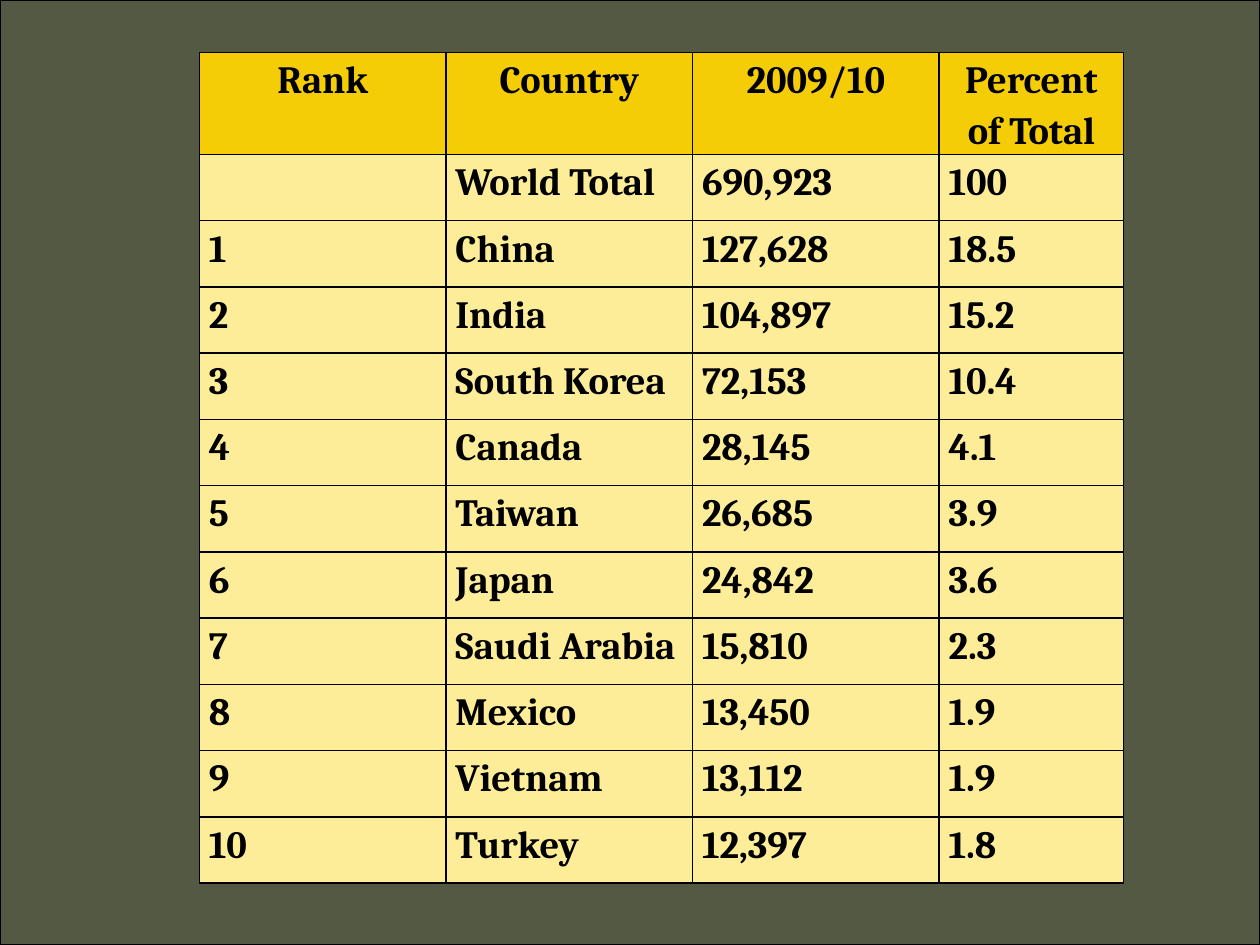
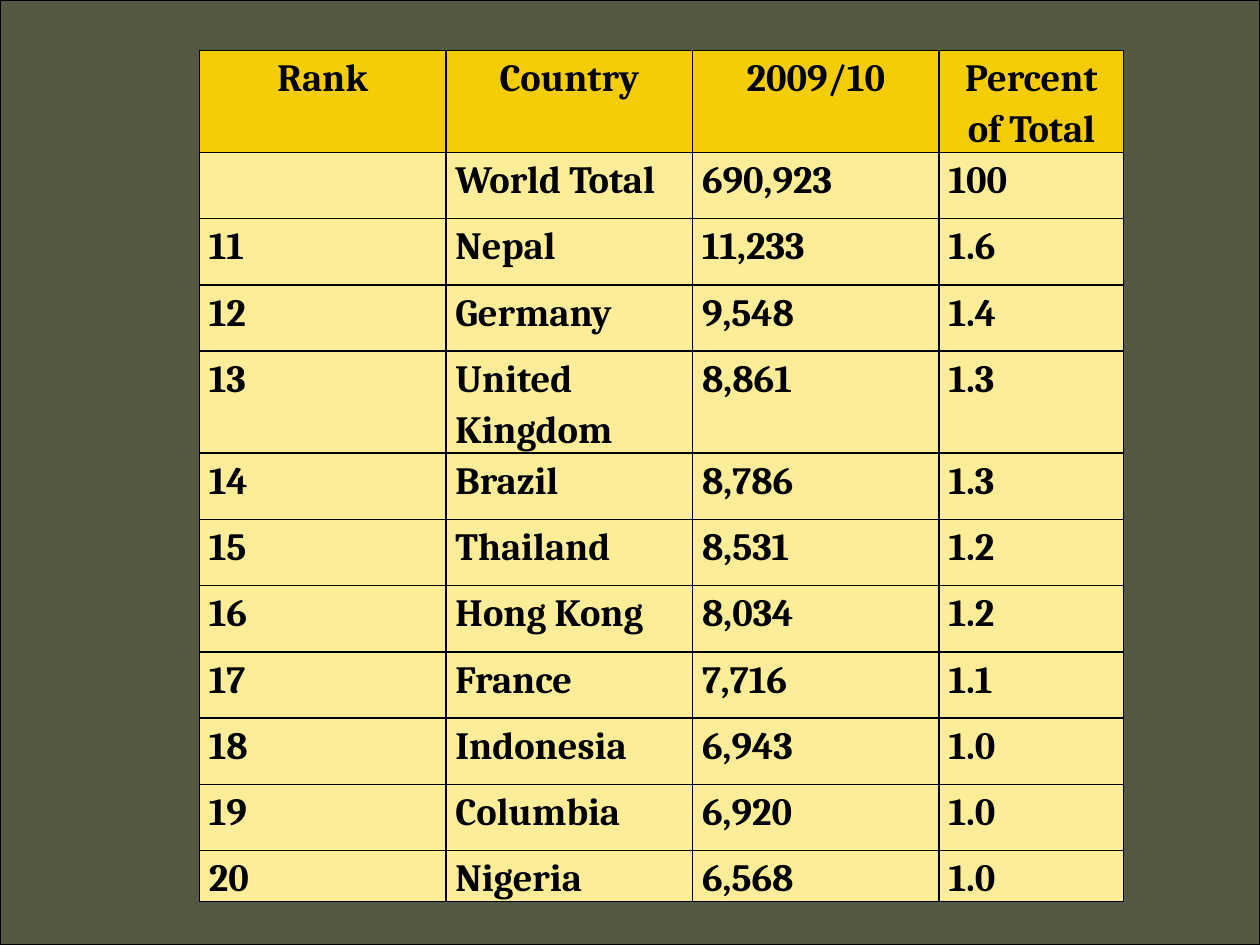
from lxml import etree
from pptx import Presentation
from pptx.dml.color import RGBColor
from pptx.enum import shapes, text
from pptx.oxml import ns
from pptx.util import Pt

OLIVE = RGBColor(0x54, 0x59, 0x43)
GOLD = RGBColor(0xF5, 0xCD, 0x06)
CREAM = RGBColor(0xFD, 0xEC, 0x98)
BLACK = RGBColor(0, 0, 0)

SLIDE_WIDTH, SLIDE_HEIGHT = Pt(720), Pt(540)
TABLE_LEFT = Pt(114)
COLUMN_WIDTHS = [Pt(140.9)] * 3 + [Pt(105.5)]
ROW_HEIGHT, TWO_LINE_HEIGHT, ONE_LINE_HEIGHT = Pt(37.87), Pt(58.3), Pt(29.1)

HEADINGS = ("Rank", "Country", "2009/10", "Percent of Total")
WORLD_TOTAL = ("", "World Total", "690,923", "100")
TOP_TEN = [
    ("1", "China", "127,628", "18.5"),
    ("2", "India", "104,897", "15.2"),
    ("3", "South Korea", "72,153", "10.4"),
    ("4", "Canada", "28,145", "4.1"),
    ("5", "Taiwan", "26,685", "3.9"),
    ("6", "Japan", "24,842", "3.6"),
    ("7", "Saudi Arabia", "15,810", "2.3"),
    ("8", "Mexico", "13,450", "1.9"),
    ("9", "Vietnam", "13,112", "1.9"),
    ("10", "Turkey", "12,397", "1.8"),
]
NEXT_TEN = [
    ("11", "Nepal", "11,233", "1.6"),
    ("12", "Germany", "9,548", "1.4"),
    ("13", "United Kingdom", "8,861", "1.3"),
    ("14", "Brazil", "8,786", "1.3"),
    ("15", "Thailand", "8,531", "1.2"),
    ("16", "Hong Kong", "8,034", "1.2"),
    ("17", "France", "7,716", "1.1"),
    ("18", "Indonesia", "6,943", "1.0"),
    ("19", "Columbia", "6,920", "1.0"),
    ("20", "Nigeria", "6,568", "1.0"),
]


def write(frame, words, size=22, color=BLACK, bold=True, font="Cambria",
          align=text.PP_ALIGN.LEFT, line_spacing=1.15):
    paragraph = frame.paragraphs[0]
    paragraph.alignment = align
    paragraph.line_spacing = line_spacing
    if not words:
        return
    run = paragraph.add_run()
    run.text = words
    run.font.name = font
    run.font.size = Pt(size)
    run.font.bold = bold
    run.font.color.rgb = color


def add_backdrop(slide):
    backdrop = slide.shapes.add_shape(
        shapes.MSO_SHAPE.RECTANGLE, 0, 0, SLIDE_WIDTH, SLIDE_HEIGHT)
    backdrop.shadow.inherit = False
    backdrop.fill.solid()
    backdrop.fill.fore_color.rgb = OLIVE
    backdrop.line.color.rgb = BLACK
    backdrop.line.width = Pt(0.75)


def add_borders(cell, color=BLACK, width=Pt(1)):
    """Rule all four sides; call before the fill is set."""
    properties = cell._tc.get_or_add_tcPr()
    for side in ("a:lnL", "a:lnR", "a:lnT", "a:lnB"):
        border = etree.SubElement(properties, ns.qn(side), w=str(width))
        fill = etree.SubElement(border, ns.qn("a:solidFill"))
        etree.SubElement(fill, ns.qn("a:srgbClr"), val=str(color))


def format_cell(cell, words, fill, align):
    cell.margin_left = cell.margin_right = Pt(5.4)
    cell.margin_top = cell.margin_bottom = 0
    add_borders(cell)
    cell.fill.solid()
    cell.fill.fore_color.rgb = fill
    write(cell.text_frame, words, align=align)


def add_ranking(slide, countries, top, special_heights):
    """special_heights maps a row number to a height other than the usual."""
    rows = [HEADINGS, WORLD_TOTAL, *countries]
    heights = [special_heights.get(number, ROW_HEIGHT)
               for number in range(len(rows))]
    ranking = slide.shapes.add_table(
        len(rows), len(HEADINGS), TABLE_LEFT, top,
        sum(COLUMN_WIDTHS), sum(heights)).table
    ranking.horz_banding = False
    for column, width in zip(ranking.columns, COLUMN_WIDTHS):
        column.width = width
    for number, (row, height) in enumerate(zip(rows, heights)):
        ranking.rows[number].height = height
        fill, align = ((CREAM, text.PP_ALIGN.LEFT) if number
                       else (GOLD, text.PP_ALIGN.CENTER))
        for cell, words in zip(ranking.rows[number].cells, row):
            format_cell(cell, words, fill, align)


def main():
    deck = Presentation()
    deck.slide_width, deck.slide_height = SLIDE_WIDTH, SLIDE_HEIGHT
    blank = deck.slide_layouts[6]
    rankings = [
        (TOP_TEN, Pt(30), {0: TWO_LINE_HEIGHT}),
        (NEXT_TEN, Pt(28.8),
         {0: TWO_LINE_HEIGHT, 4: TWO_LINE_HEIGHT, 11: ONE_LINE_HEIGHT}),
    ]
    for countries, top, special_heights in rankings:
        slide = deck.slides.add_slide(blank)
        add_backdrop(slide)
        add_ranking(slide, countries, top, special_heights)
    deck.save("out.pptx")


if __name__ == "__main__":
    main()
